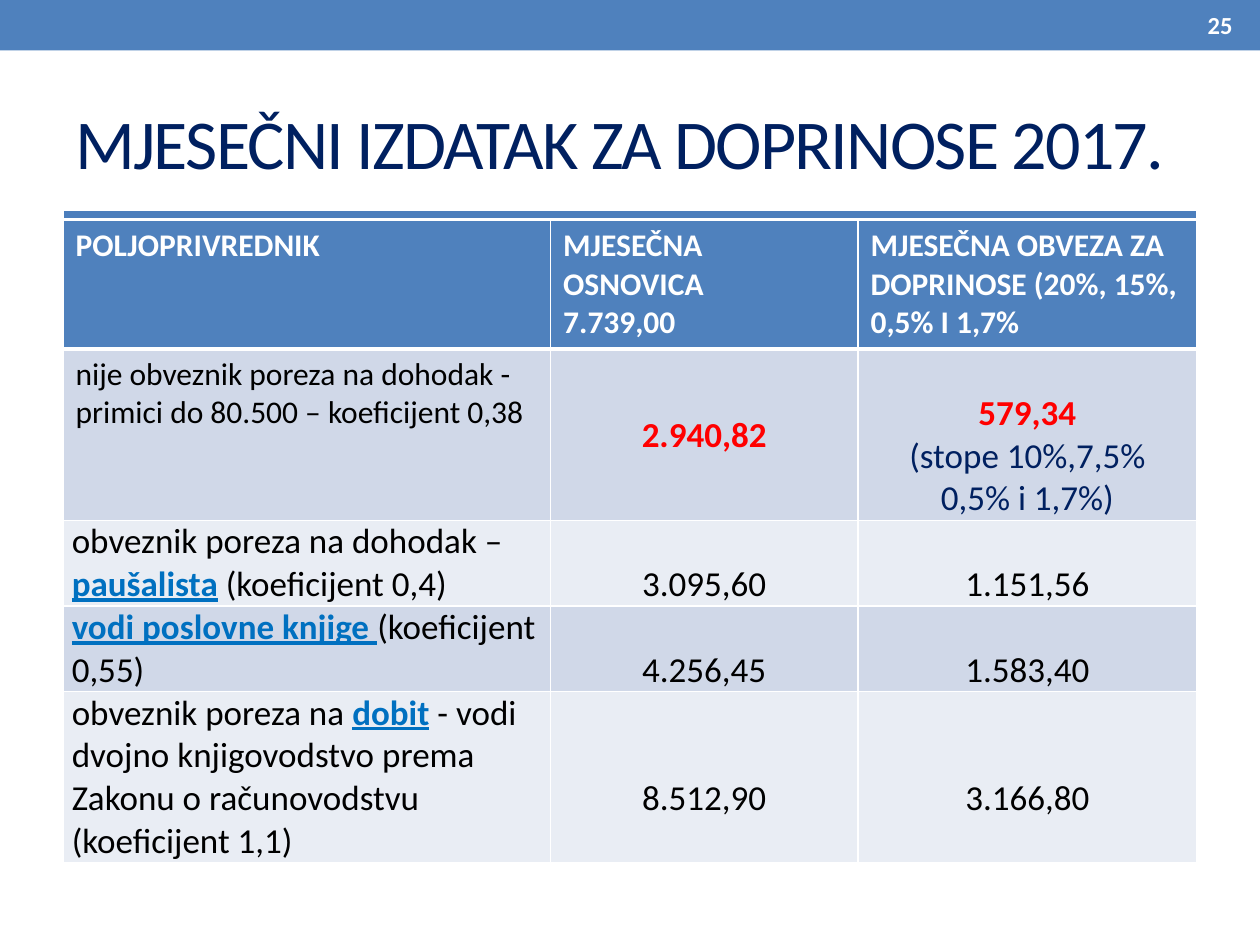
from lxml.etree import SubElement
from pptx import Presentation
from pptx.dml.color import RGBColor
from pptx.enum.shapes import MSO_CONNECTOR, MSO_SHAPE
from pptx.enum.text import MSO_ANCHOR, PP_ALIGN
from pptx.oxml.ns import qn
from pptx.util import Inches, Pt

BLUE, NAVY, WHITE, RED = "4F81BD", "002060", "FFFFFF", "FF0000"
BANDS = ["D0D8E8", "E9EDF4"]
HEAD = {"size": Pt(18), "bold": True, "color": WHITE}
SMALL = {"size": Pt(18)}
BODY = {"size": Pt(20)}
LINK = {**BODY, "bold": True, "underline": True, "color": "0070C0"}
HOT = {**BODY, "bold": True, "color": RED}
NOTE = {**BODY, "color": NAVY}
TITLE = {"size": Pt(40), "color": NAVY}
PAGE = {"size": Pt(14), "bold": True, "color": WHITE}
LEFT, MID, RIGHT = PP_ALIGN.LEFT, PP_ALIGN.CENTER, PP_ALIGN.RIGHT
COLS = [3.87, 2.44, 2.69]
ROWS = [1.02, 1.36, 0.68, 0.68, 1.36]
LINE = 0.34


def paint(text):
    return RGBColor.from_string(text)


class Deck:
    """Holds the style and the current slide, and draws each kind of element."""

    def __init__(self, font):
        self.font = font
        self.show = Presentation()
        self.show.slide_width, self.show.slide_height = Inches(10), Inches(7.5)
        self.slide = self.show.slides.add_slide(self.show.slide_layouts[6])

    def prose(self, frame, paras, align=LEFT):
        frame.word_wrap = True
        for i, runs in enumerate(paras):
            para = frame.add_paragraph() if i else frame.paragraphs[0]
            para.alignment = align
            for text, style in runs:
                run = para.add_run()
                run.text = text
                look = {"name": self.font, "bold": False, "color": "000000", **style}
                run.font.color.rgb = paint(look.pop("color"))
                for key, value in look.items():
                    setattr(run.font, key, value)

    def bar(self, box, color):
        shape = self.slide.shapes.add_shape(MSO_SHAPE.RECTANGLE, *map(Inches, box))
        shape.shadow.inherit = False
        shape.fill.solid()
        shape.fill.fore_color.rgb = paint(color)
        shape.line.fill.background()

    def rule(self, ends, color, width):
        line = self.slide.shapes.add_connector(MSO_CONNECTOR.STRAIGHT, *map(Inches, ends))
        line.line.color.rgb = paint(color)
        line.line.width = Pt(width)
        SubElement(line._element.spPr, qn("a:effectLst"))

    def label(self, box, text, style, align=LEFT, track=0):
        frame = self.slide.shapes.add_textbox(*map(Inches, box)).text_frame
        frame.vertical_anchor = MSO_ANCHOR.MIDDLE
        self.prose(frame, [[(text, style)]], align)
        if track:
            frame.paragraphs[0].runs[0].font._element.set("spc", str(track * 100))

    def table(self, box, cols, rows):
        shape = self.slide.shapes.add_table(len(rows), len(cols), *map(Inches, box))
        grid = shape.table
        for col, width in zip(grid.columns, cols):
            col.width = Inches(width)
        for row, height in zip(grid.rows, rows):
            row.height = Inches(height)
        return grid

    def cell(self, cell, paras, fill, edges, align=LEFT, pad=None, anchor=MSO_ANCHOR.TOP):
        cell.vertical_anchor = anchor
        if pad:
            sides = ["margin_left", "margin_top", "margin_right", "margin_bottom"]
            for side, gap in zip(sides, pad):
                setattr(cell, side, Inches(gap))
        self.prose(cell.text_frame, paras, align)
        for tag, width in edges.items():
            edge = SubElement(cell._tc.get_or_add_tcPr(), qn("a:" + tag), w=str(Pt(width)))
            SubElement(SubElement(edge, qn("a:solidFill")), qn("a:srgbClr"), val=WHITE)
        cell.fill.solid()
        cell.fill.fore_color.rgb = paint(fill)


def main():
    deck = Deck("Calibri")
    deck.bar([0, 0, 10, 0.4], BLUE)
    deck.rule([0.51, 1.7, 9.49, 1.7], "4B7EBC", 4)
    deck.label([0.5, 0.58, 9, 1.08], "MJESEČNI IZDATAK ZA DOPRINOSE 2017.", TITLE, track=-1)
    grid = deck.table([0.5, 1.75, 9, sum(ROWS)], COLS, ROWS)

    heads = [["POLJOPRIVREDNIK"], ["MJESEČNA OSNOVICA", "7.739,00"],
             ["MJESEČNA OBVEZA ZA DOPRINOSE (20%, 15%, 0,5% I 1,7%"]]
    edges = {"lnL": 1, "lnR": 1, "lnT": 1, "lnB": 3}
    for c, lines in enumerate(heads):
        deck.cell(grid.cell(0, c), [[(line, HEAD)] for line in lines], BLUE, edges)

    edges = {"lnL": 1, "lnR": 1, "lnT": 3, "lnB": 1}
    text = "nije obveznik poreza na dohodak - primici do 80.500 – koeficijent 0,38"
    deck.cell(grid.cell(1, 0), [[(text, SMALL)]], BANDS[0], edges)
    deck.cell(grid.cell(1, 1), [[("2.940,82", HOT)]], BANDS[0], edges, MID,
              [0.01, 0.01, 0.01, 0], MSO_ANCHOR.MIDDLE)
    paras = [[("579,34", HOT)], [("(stope 10%,7,5%", NOTE)], [("0,5% i 1,7%)", NOTE)]]
    deck.cell(grid.cell(1, 2), paras, BANDS[0], edges, MID, [0.07, LINE, 0.07, 0])

    body = [
        ([("obveznik poreza na dohodak – ", BODY), ("paušalista", LINK),
          (" (koeficijent 0,4)", BODY)], 1, "3.095,60", "1.151,56"),
        ([("vodi poslovne knjige ", LINK), ("(koeficijent 0,55)", BODY)],
         1, "4.256,45", "1.583,40"),
        ([("obveznik poreza na ", BODY), ("dobit", LINK),
          (" - vodi dvojno knjigovodstvo prema Zakonu o računovodstvu "
           "(koeficijent 1,1)", BODY)], 2, "8.512,90", "3.166,80"),
    ]
    edges = dict.fromkeys(["lnL", "lnR", "lnT", "lnB"], 1)
    for r, (runs, drop, *sums) in enumerate(body, 2):
        fill = BANDS[(r - 1) % 2]
        deck.cell(grid.cell(r, 0), [runs], fill, edges, pad=[0.07, 0, 0.07, 0])
        for c, value in enumerate(sums, 1):
            deck.cell(grid.cell(r, c), [[(value, BODY)]], fill, edges, MID,
                      [0.07, drop * LINE, 0.07, 0])

    deck.label([9.09, 0.02, 0.79, 0.36], "25", PAGE, RIGHT)
    deck.show.save("out.pptx")


if __name__ == "__main__":
    main()
